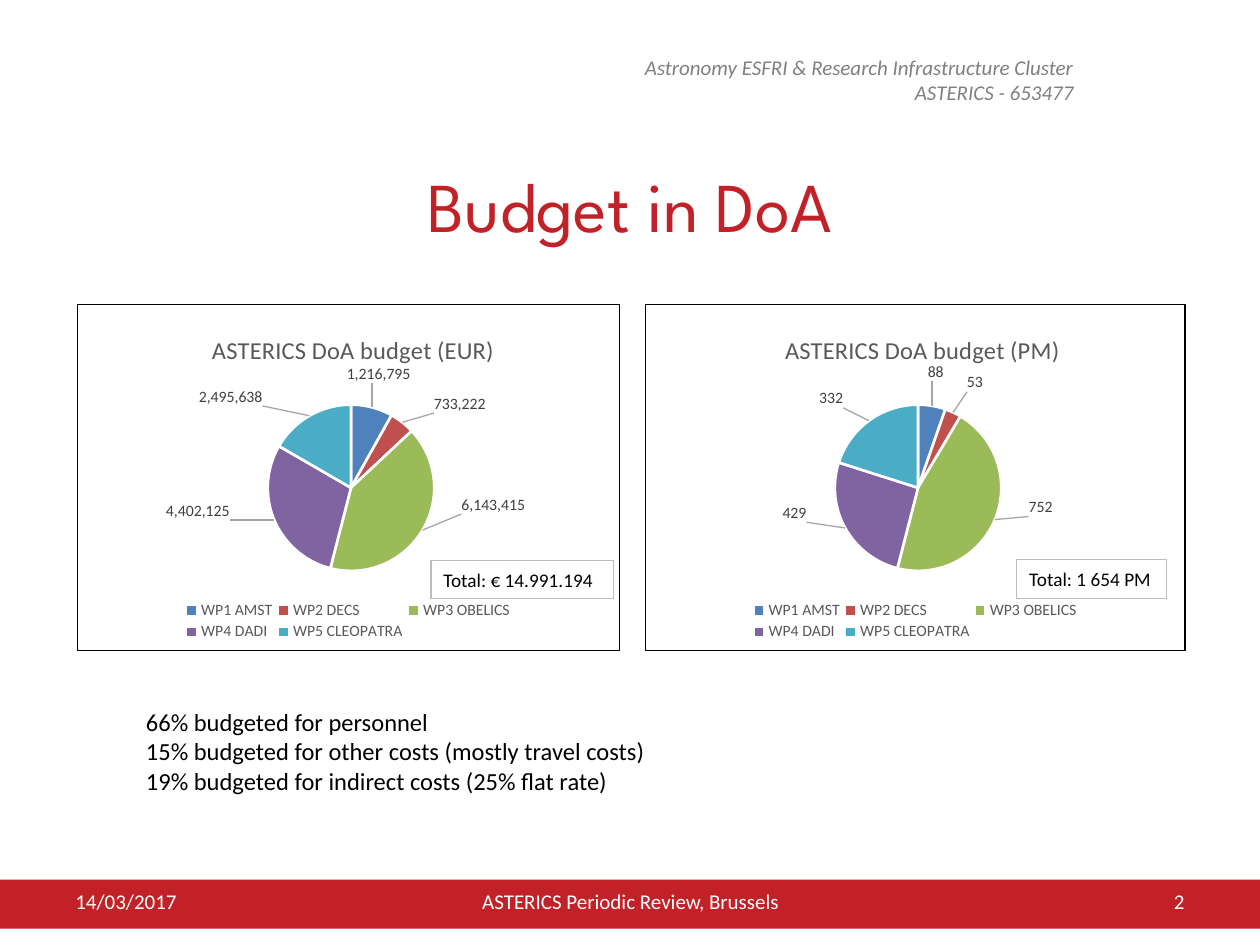
from typing import NamedTuple

from lxml import etree
from pptx import Presentation, util as u
from pptx.chart.data import CategoryChartData
from pptx.dml.color import RGBColor
from pptx.enum import chart as ch, shapes, text
from pptx.oxml import parse_xml
from pptx.oxml.ns import nsdecls, qn

HUE = {"red": "C32128", "white": "FFFFFF", "black": "000000", "head": "808080",
       "edge": "BDBDBD", "title": "595959", "label": "404040", "lead": "A6A6A6"}
SLICES = ["4F81BD", "C0504D", "9BBB59", "8064A2", "4BACC6"]
PACKS = ["WP1 AMST", "WP2 DECS", "WP3 OBELICS", "WP4 DADI", "WP5 CLEOPATRA"]
LEFT, MID, RIGHT = text.PP_ALIGN.LEFT, text.PP_ALIGN.CENTER, text.PP_ALIGN.RIGHT
WIDE, HIGH = u.Inches(10), u.Inches(7.5)


class Box(NamedTuple):
    """A frame in percent of the slide's size."""
    x: float
    y: float
    w: float
    h: float

    def emu(self) -> list[int]:
        return [round(part * full / 100) for part, full in zip(self, (WIDE, HIGH) * 2)]


class Pie(NamedTuple):
    """A budget chart; layout values are shares of the chart's size."""
    title: str
    box: Box
    vals: list[int]
    shifts: list[tuple[float, float]]
    head: tuple[float, float]
    total: str
    tag: Box


PIES = [
    Pie("ASTERICS DoA budget (EUR)", Box(6.1, 32.13, 43.1, 36.8),
        [1216795, 733222, 6143415, 4402125, 2495638],
        [(-.05, -.05), (.05, -.01), (.06, -.11), (-.07, -.06), (-.08, -.01)],
        (.24, .07), "Total: € 14.991.194", Box(34.2, 59.33, 14.5, 4)),
    Pie("ASTERICS DoA budget (PM)", Box(51.2, 32.13, 42.9, 36.8),
        [88, 53, 752, 429, 332],
        [(-.01, -.05), (.02, -.04), (.05, -.07), (-.06, -.08), (-.04, -.02)],
        (.25, .07), "Total: 1 654 PM", Box(80.7, 59.2, 11.9, 4.13)),
]
FOOT = [("14/03/2017", Box(5, 92.67, 23.3, 5.33), LEFT),
        ("ASTERICS Periodic Review, Brussels", Box(34.2, 92.67, 31.7, 5.33), MID),
        ("2", Box(71.7, 92.67, 23.3, 5.33), RIGHT)]


def rgb(name: str) -> RGBColor:
    return RGBColor.from_string(HUE.get(name, name))


def style(font, size: float, color: str, face: str = "Calibri", italic: bool = False) -> None:
    font.size, font.name, font.italic, font.bold = u.Pt(size), face, italic, False
    font.color.rgb = rgb(color)


def write(shape, *lines: str, size: float = 12, color: str = "black", align=LEFT,
          anchor=text.MSO_ANCHOR.MIDDLE, **look) -> None:
    frame = shape.text_frame
    frame.word_wrap, frame.vertical_anchor = True, anchor
    frame.text = "\n".join(lines)
    for para in frame.paragraphs:
        para.alignment = align
        for run in para.runs:
            style(run.font, size, color, **look)


def rect(slide, box: Box, fill: str, line: str = ""):
    shape = slide.shapes.add_shape(shapes.MSO_SHAPE.RECTANGLE, *box.emu())
    shape.shadow.inherit = False
    shape.fill.solid()
    shape.fill.fore_color.rgb = rgb(fill)
    if line:
        shape.line.color.rgb, shape.line.width = rgb(line), u.Pt(0.75)
    else:
        shape.line.fill.background()
    return shape


def label(slide, box: Box, *lines: str, **look) -> None:
    write(slide.shapes.add_textbox(*box.emu()), *lines, **look)


def place(node, index: int, x: float, y: float, w: float = 0, h: float = 0,
          edge: bool = True, inner: bool = False) -> None:
    """Give a chart part a manual layout, as a position or as a shift."""
    for old in node.findall(qn("c:layout")):
        node.remove(old)
    tags = [("layoutTarget", "inner")] if inner else []
    tags += [("xMode", "edge"), ("yMode", "edge")] if edge else []
    tags += [("x", x), ("y", y)] + ([("w", w), ("h", h)] if w else [])
    body = "".join(f'<c:{tag} val="{val}"/>' for tag, val in tags)
    node.insert(index, parse_xml(f'<c:layout {nsdecls("c")}><c:manualLayout>{body}'
                                 '</c:manualLayout></c:layout>'))


def outline(color: str, fill: str = "") -> str:
    paint = '<a:solidFill><a:srgbClr val="{}"/></a:solidFill>'
    return (f'<c:spPr {nsdecls("c", "a")}>{paint.format(HUE[fill]) if fill else ""}'
            f'<a:ln w="{u.Pt(0.75)}">{paint.format(HUE[color])}</a:ln></c:spPr>')


def draw(slide, pie: Pie) -> None:
    data = CategoryChartData(number_format="#,##0")
    data.categories = PACKS
    data.add_series("Series 1", pie.vals)
    chart = slide.shapes.add_chart(ch.XL_CHART_TYPE.PIE, *pie.box.emu(), data).chart
    style(chart.font, 10, "black")

    # Frame
    root = chart.element
    core = root.find(qn("c:chart"))
    for old in root.findall(qn("c:roundedCorners")):
        root.remove(old)
    core.addprevious(parse_xml(f'<c:roundedCorners {nsdecls("c")} val="0"/>'))
    core.addnext(parse_xml(outline("black", "white")))

    # Title, plot and legend
    chart.has_title = chart.has_legend = True
    frame = chart.chart_title.text_frame
    frame.text = pie.title
    style(frame.paragraphs[0].runs[0].font, 14, "title")
    place(core.find(qn("c:title")), 1, *pie.head)
    place(core.find(qn("c:plotArea")), 0, .35, .29, .31, .48, inner=True)
    key = chart.legend
    key.position, key.include_in_layout = ch.XL_LEGEND_POSITION.BOTTOM, False
    style(key.font, 9, "title")
    place(core.find(qn("c:legend")), 1, .19, .85, .62, .13)

    # Slices and their labels
    plot = chart.plots[0]
    plot.vary_by_categories = True
    series = plot.series[0]
    notes = series.data_labels
    notes.show_value, notes.number_format = True, "#,##0"
    notes.number_format_is_linked = False
    notes.position = ch.XL_LABEL_POSITION.OUTSIDE_END
    style(notes.font, 9, "label")
    for i, (color, shift) in enumerate(zip(SLICES, pie.shifts)):
        point = series.points[i]
        point.format.fill.solid()
        point.format.fill.fore_color.rgb = rgb(color)
        point.format.line.color.rgb, point.format.line.width = rgb("white"), u.Pt(1.5)
        style(point.data_label.font, 9, "label")
        point.data_label.position = ch.XL_LABEL_POSITION.OUTSIDE_END
    root_notes = root.find(".//" + qn("c:ser")).find(qn("c:dLbls"))
    for node, shift in zip(root_notes.findall(qn("c:dLbl")), pie.shifts):
        place(node, 1, *shift, edge=False)
    for old in root_notes.findall(qn("c:showLeaderLines")):
        root_notes.remove(old)
    etree.SubElement(root_notes, qn("c:showLeaderLines")).set("val", "1")
    lead = etree.SubElement(root_notes, qn("c:leaderLines"))
    lead.append(parse_xml(outline("lead")))

    # Total
    write(rect(slide, pie.tag, "white", "edge"), pie.total, size=11)


def main() -> None:
    deck = Presentation()
    deck.slide_width, deck.slide_height = WIDE, HIGH
    slide = deck.slides.add_slide(deck.slide_layouts[5])

    # Header and title
    label(slide, Box(43.7, 5.07, 42.5, 6.67), "Astronomy ESFRI & Research Infrastructure Cluster",
          "ASTERICS - 653477", color="head", align=RIGHT, italic=True,
          anchor=text.MSO_ANCHOR.TOP)
    title = slide.shapes.title
    title.left, title.top, title.width, title.height = Box(5, 15.33, 90, 12.53).emu()
    write(title, "Budget in DoA", size=40, color="red", align=MID, face="League Spartan")

    # Charts
    for pie in PIES:
        draw(slide, pie)

    # Cost shares
    label(slide, Box(10.6, 74.13, 48.8, 14.8), "66% budgeted for personnel",
          "15% budgeted for other costs (mostly travel costs)",
          "19% budgeted for indirect costs (25% flat rate)",
          size=14, anchor=text.MSO_ANCHOR.TOP)

    # Footer
    rect(slide, Box(0, 93.07, 100, 5.2), "red")
    for words, box, align in FOOT:
        label(slide, box, words, color="white", align=align)
    deck.save("out.pptx")


if __name__ == "__main__":
    main()
